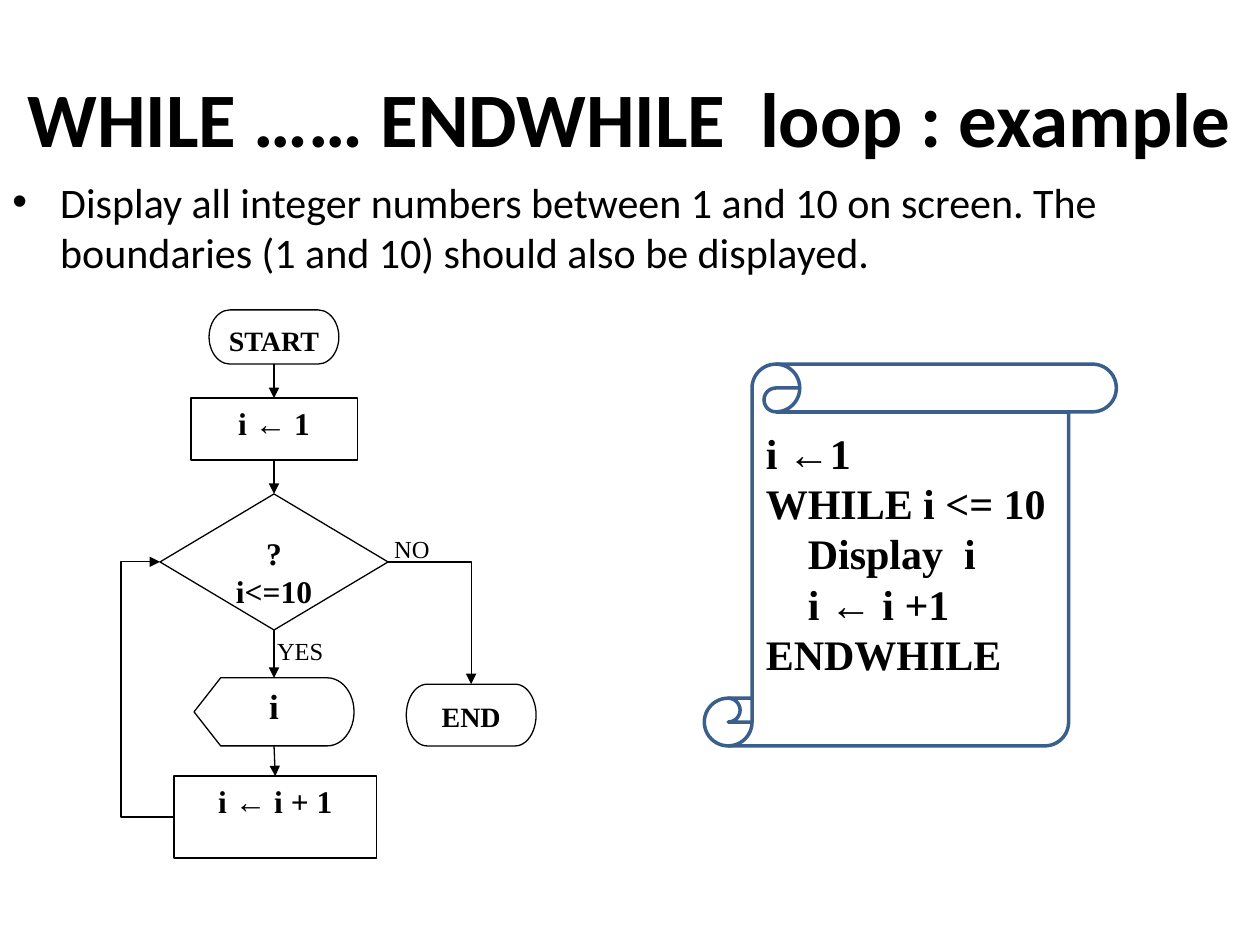
"""Build a slide that shows a WHILE loop as a flowchart and as pseudocode."""
import dataclasses

import pptx
import pptx.dml.color
import pptx.enum.shapes
import pptx.enum.text
import pptx.oxml
import pptx.oxml.ns
import pptx.util
from lxml import etree

SHAPES = pptx.enum.shapes.MSO_SHAPE
CONNECTORS = pptx.enum.shapes.MSO_CONNECTOR
ALIGN = pptx.enum.text.PP_ALIGN
ANCHOR = pptx.enum.text.MSO_ANCHOR


@dataclasses.dataclass(frozen=True)
class Theme:
    heading_font: str = "Calibri"
    code_font: str = "Times New Roman"
    ink: str = "000000"
    paper: str = "FFFFFF"
    scroll: str = "3A5F8C"
    title_size: int = 44
    body_size: int = 24
    label_size: int = 14
    thin: float = 0.75
    thick: float = 2


THEME = Theme()
SLIDE_SIZE = (10, 7.5)
COLUMNS, ROWS = 100, 75

TITLE = "WHILE …… ENDWHILE  loop : example"
TASK = ("Display all integer numbers between 1 and 10 on screen. "
        "The boundaries (1 and 10) should also be displayed.")
CODE = [("i ←1", 0), ("WHILE i <= 10", 0), ("Display  i", 1), ("i ← i +1", 1), ("ENDWHILE", 0)]
CODE_INDENT = 3.33

TITLE_AREA = (0, 3, 100, 12.5)
TASK_AREA = (0, 13.5, 100, 9.4)
SCROLL_AREA = (55.9, 28.9, 32.7, 30.3)
CODE_AREA = (59.8, 33.4, 25, 21.2)
LABELS = [("YES", 21, 50), ("NO", 30.3, 41.9)]
LABEL_SIZE = (5.9, 3.8)

MAIN_AXIS, EXIT_AXIS, RETURN_AXIS = 21.75, 37.4, 9.6
NODES = {
    "start": (SHAPES.FLOWCHART_TERMINATOR, ["START"], 16, MAIN_AXIS, 24.6, 10.3, 4.3),
    "assign": (SHAPES.FLOWCHART_PROCESS, ["i ← 1"], 18, MAIN_AXIS, 31.6, 13.2, 4.9),
    "test": (SHAPES.FLOWCHART_DECISION, ["?", "i<=10"], 18, MAIN_AXIS, 39.2, 18.1, 10.8),
    "display": (SHAPES.FLOWCHART_DISPLAY, ["i"], 20, MAIN_AXIS, 53.8, 12.7, 5.4),
    "increment": (SHAPES.FLOWCHART_PROCESS, ["i ← i + 1"], 18, MAIN_AXIS + 0.1, 61.6, 16.1, 6.5),
    "end": (SHAPES.FLOWCHART_TERMINATOR, ["END"], 16, EXIT_AXIS, 54.3, 10.3, 4.9),
}
MAIN_FLOW = ["start", "assign", "test", "display", "increment"]


def grid(*lengths):
    """Turn alternating columns and rows into slide lengths."""
    units = (SLIDE_SIZE[0] / COLUMNS, SLIDE_SIZE[1] / ROWS)
    return [pptx.util.Inches(length * units[index % 2]) for index, length in enumerate(lengths)]


def color(value):
    return pptx.dml.color.RGBColor.from_string(value)


def write(shape, lines, font, size, bold=False, align=ALIGN.LEFT, anchor=ANCHOR.TOP):
    frame = shape.text_frame
    frame.word_wrap = True
    frame.vertical_anchor = anchor
    frame.text = "\n".join(lines)
    for paragraph in frame.paragraphs:
        paragraph.alignment = align
        paragraph.font.name = font
        paragraph.font.size = pptx.util.Pt(size)
        paragraph.font.bold = bold
        paragraph.font.color.rgb = color(THEME.ink)
    return frame.paragraphs


def add_box(slide, kind, area, fill=None, line=None, width=THEME.thin):
    shape = slide.shapes.add_shape(kind, *grid(*area))
    shape.shadow.inherit = False
    if fill:
        shape.fill.solid()
        shape.fill.fore_color.rgb = color(fill)
    else:
        shape.fill.background()
    if line:
        shape.line.color.rgb = color(line)
        shape.line.width = pptx.util.Pt(width)
    else:
        shape.line.fill.background()
    return shape


def add_arrow(slide, kind, begin, end):
    arrow = slide.shapes.add_connector(kind, *begin, *end)
    arrow.line.color.rgb = color(THEME.ink)
    arrow.line.width = pptx.util.Pt(THEME.thin)
    outline = arrow.line._get_or_add_ln()
    etree.SubElement(outline, pptx.oxml.ns.qn("a:tailEnd"), type="triangle")
    etree.SubElement(arrow._element.spPr, pptx.oxml.ns.qn("a:effectLst"))
    return arrow


def side(shape, share_x, share_y):
    return (int(shape.left + shape.width * share_x), int(shape.top + shape.height * share_y))


def add_text(slide):
    task = slide.shapes.add_textbox(*grid(*TASK_AREA))
    paragraph = write(task, [TASK], THEME.heading_font, THEME.body_size)[0]
    paragraph.space_before = pptx.util.Pt(THEME.body_size * 0.2)
    properties = paragraph._p.get_or_add_pPr()
    indent = pptx.util.Inches(0.38)
    properties.set("marL", str(indent))
    properties.set("indent", str(-indent))
    etree.SubElement(properties, pptx.oxml.ns.qn("a:buFont"), typeface="Arial")
    etree.SubElement(properties, pptx.oxml.ns.qn("a:buChar"), char="•")
    properties.append(properties.find(pptx.oxml.ns.qn("a:defRPr")))
    title = slide.shapes.add_textbox(*grid(*TITLE_AREA))
    write(title, [TITLE], THEME.heading_font, THEME.title_size, True, ALIGN.CENTER, ANCHOR.MIDDLE)


def add_flowchart(slide):
    for text, left, top in LABELS:
        label = add_box(slide, SHAPES.RECTANGLE, (left, top, *LABEL_SIZE), THEME.paper)
        write(label, [text], THEME.code_font, THEME.label_size)
    nodes = {}
    for name, (kind, lines, size, center, top, width, height) in NODES.items():
        area = (center - width / 2, top, width, height)
        nodes[name] = add_box(slide, kind, area, THEME.paper, THEME.ink)
        write(nodes[name], lines, THEME.code_font, size, True, ALIGN.CENTER)
    for source, target in zip(MAIN_FLOW, MAIN_FLOW[1:]):
        begin, end = side(nodes[source], 0.5, 1), side(nodes[target], 0.5, 0)
        arrow = add_arrow(slide, CONNECTORS.STRAIGHT, begin, end)
        arrow.begin_connect(nodes[source], 2)
        arrow.end_connect(nodes[target], 0)
    leave = add_arrow(slide, CONNECTORS.ELBOW, side(nodes["test"], 1, 0.5), side(nodes["end"], 0.5, 0))
    leave._element.spPr.prstGeom.set("prst", "bentConnector2")
    begin, end = side(nodes["increment"], 0, 0.5), side(nodes["test"], 0, 0.5)
    repeat = add_arrow(slide, CONNECTORS.ELBOW, begin, end)
    bend = (begin[0] - grid(RETURN_AXIS)[0]) / (begin[0] - end[0])
    adjustments = repeat._element.spPr.prstGeom.get_or_add_avLst()
    etree.SubElement(adjustments, pptx.oxml.ns.qn("a:gd"), name="adj1", fmla=f"val {round(bend * 100000)}")


def add_pseudocode(slide):
    add_box(slide, SHAPES.VERTICAL_SCROLL, SCROLL_AREA, line=THEME.scroll, width=THEME.thick)
    code = slide.shapes.add_textbox(*grid(*CODE_AREA))
    lines = [text for text, level in CODE]
    paragraphs = write(code, lines, THEME.code_font, THEME.body_size, True)
    for paragraph, (text, level) in zip(paragraphs, CODE):
        if level:
            paragraph._p.get_or_add_pPr().set("marL", str(grid(level * CODE_INDENT)[0]))


def main():
    presentation = pptx.Presentation()
    presentation.slide_width, presentation.slide_height = map(pptx.util.Inches, SLIDE_SIZE)
    slide = presentation.slides.add_slide(presentation.slide_layouts[6])
    add_text(slide)
    add_flowchart(slide)
    add_pseudocode(slide)
    presentation.save("out.pptx")


if __name__ == "__main__":
    main()
